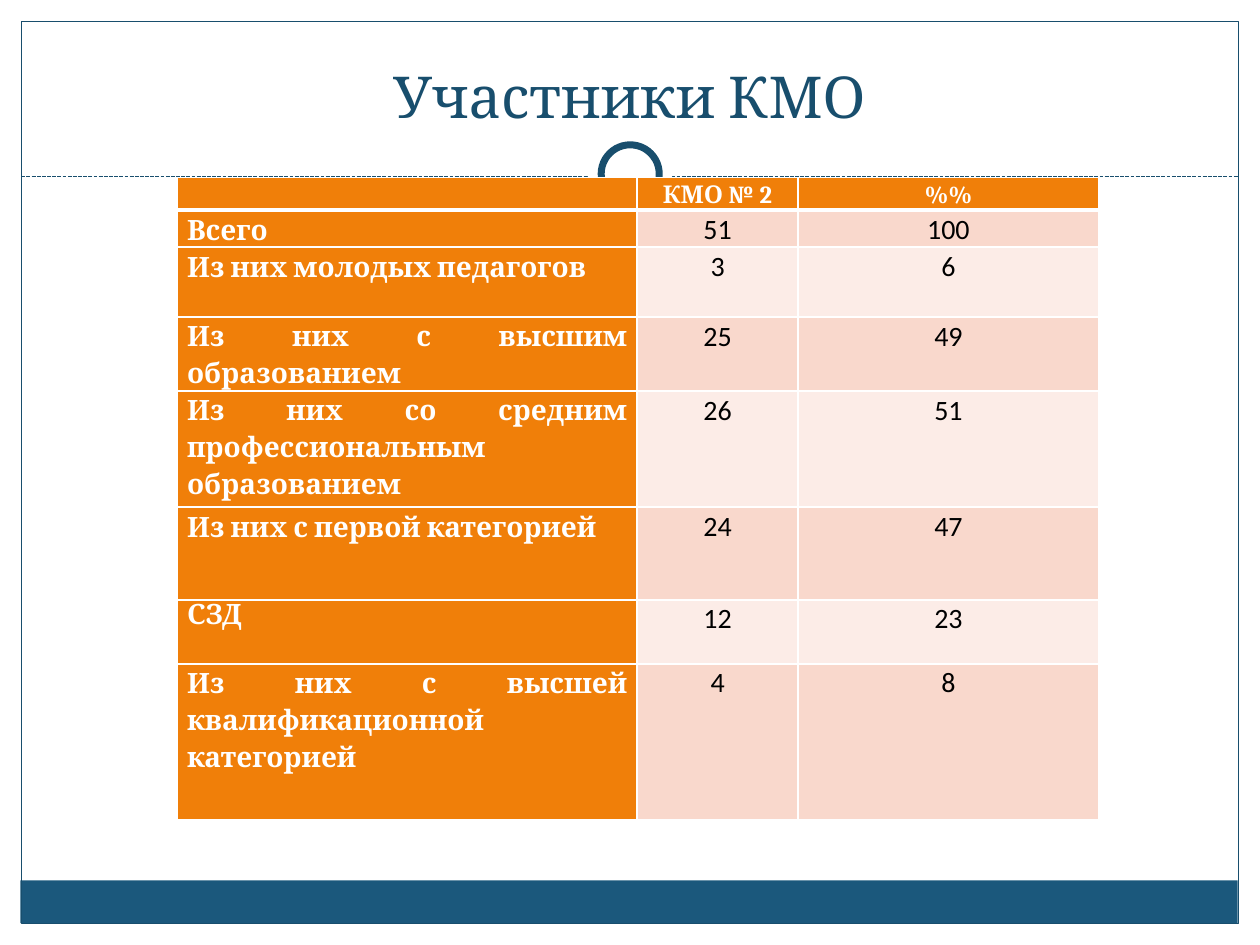
from lxml.etree import SubElement
from pptx import Presentation
from pptx.dml.color import RGBColor
from pptx.enum.dml import MSO_LINE
from pptx.enum.shapes import MSO_CONNECTOR, MSO_SHAPE
from pptx.enum.text import MSO_ANCHOR, PP_ALIGN
from pptx.oxml.ns import qn
from pptx.util import Cm, Pt

WHITE = RGBColor(0xFF, 0xFF, 0xFF)
BLACK = RGBColor(0, 0, 0)
NAVY = RGBColor(0x18, 0x4E, 0x6D)
BLUE = RGBColor(0x1B, 0x58, 0x7C)
ORANGE = RGBColor(0xF0, 0x7F, 0x09)
PINK = RGBColor(0xF9, 0xD8, 0xCC)
PALE = RGBColor(0xFC, 0xEC, 0xE7)

COLUMNS = [9.26, 3.25, 6.06]
HEIGHTS = [0.62, 0.74, 1.41, 1.49, 2.34, 1.87, 1.29, 3.15]
ROWS = [
    ("", "КМО № 2", "%%"),
    ("Всего", "51", "100"),
    ("Из них молодых педагогов", "3", "6"),
    ("Из них с высшим образованием", "25", "49"),
    ("Из них со средним профессиональным образованием", "26", "51"),
    ("Из них с первой категорией", "24", "47"),
    ("СЗД", "12", "23"),
    ("Из них с высшей квалификационной категорией", "4", "8"),
]


def write(tf, text, size=16, font="Cambria", color=WHITE, bold=False,
          align=PP_ALIGN.CENTER, spacing=None):
    p = tf.paragraphs[0]
    p.alignment = align
    p.line_spacing = spacing
    if not text:
        SubElement(p._p, qn("a:endParaRPr"), sz=str(size * 100))
        return
    r = p.add_run()
    r.text = text
    r.font.size, r.font.name, r.font.bold = Pt(size), font, bold
    r.font.color.rgb = color


class Deck:
    def __init__(self, prs):
        self.s = prs.slides.add_slide(prs.slide_layouts[5])

    def shape(self, kind, x, y, w, h, fill=None, line=None, width=0.75):
        sp = self.s.shapes.add_shape(kind, Cm(x), Cm(y), Cm(w), Cm(h))
        sp.shadow.inherit = False
        if fill is None:
            sp.fill.background()
        else:
            sp.fill.solid()
            sp.fill.fore_color.rgb = fill
        if line is None:
            sp.line.fill.background()
        else:
            sp.line.color.rgb = line
            sp.line.width = Pt(width)

    def dashed_line(self, x1, x2, y):
        cn = self.s.shapes.add_connector(
            MSO_CONNECTOR.STRAIGHT, Cm(x1), Cm(y), Cm(x2), Cm(y))
        cn.line.color.rgb = NAVY
        cn.line.width = Pt(0.75)
        cn.line.dash_style = MSO_LINE.SQUARE_DOT
        SubElement(cn._element.spPr, qn("a:effectLst"))

    def title(self, text, x, y, w, h):
        sp = self.s.shapes.title
        sp.left, sp.top, sp.width, sp.height = Cm(x), Cm(y), Cm(w), Cm(h)
        sp.text_frame.vertical_anchor = MSO_ANCHOR.BOTTOM
        write(sp.text_frame, text, size=33, color=NAVY)
        # Bring the title in front of the background
        self.s.shapes._spTree.append(sp._element)

    def borders(self, cell, **widths):
        tc_pr = cell._tc.get_or_add_tcPr()
        for side in "LRTB":
            ln = SubElement(tc_pr, qn(f"a:ln{side}"),
                            w=str(Pt(widths.get(side, 1))))
            fill = SubElement(ln, qn("a:solidFill"))
            SubElement(fill, qn("a:srgbClr"), val=str(WHITE))

    def table(self, rows, x, y, columns, heights):
        tbl = self.s.shapes.add_table(
            len(rows), len(columns), Cm(x), Cm(y),
            Cm(sum(columns)), Cm(sum(heights))).table
        for column, width in zip(tbl.columns, columns):
            column.width = Cm(width)
        for i, (row, height) in enumerate(zip(rows, heights)):
            tbl.rows[i].height = Cm(height)
            for j, text in enumerate(row):
                self.cell(tbl.cell(i, j), text, i, j)

    def cell(self, cell, text, i, j):
        cell.margin_left = cell.margin_right = Cm(0.19)
        cell.margin_top = cell.margin_bottom = 0
        # A thick rule separates the header from the body
        self.borders(cell, B=3 if i == 0 else 1, T=3 if i == 1 else 1)
        cell.fill.solid()
        if i == 0:
            cell.fill.fore_color.rgb = ORANGE
            write(cell.text_frame, text, size=14, bold=True, spacing=1.15)
        elif j == 0:
            cell.fill.fore_color.rgb = ORANGE
            short = text == "СЗД"
            write(cell.text_frame, text, bold=True,
                  align=PP_ALIGN.LEFT if short else PP_ALIGN.JUSTIFY,
                  spacing=None if short else 1.15)
        else:
            cell.fill.fore_color.rgb = PINK if i % 2 else PALE
            write(cell.text_frame, text, font="Calibri", color=BLACK,
                  spacing=1.07)


def main():
    prs = Presentation()
    prs.slide_width, prs.slide_height = Cm(25.4), Cm(19.05)
    deck = Deck(prs)

    # White margins, bottom band and frame
    deck.shape(MSO_SHAPE.RECTANGLE, 0, 0, 25.4, 3.86, fill=WHITE)
    for x in (0, 24.97):
        deck.shape(MSO_SHAPE.RECTANGLE, x, 0, 0.43, 19.05, fill=WHITE)
    deck.shape(MSO_SHAPE.RECTANGLE, 0.41, 17.75, 24.54, 0.86, fill=BLUE)
    deck.shape(MSO_SHAPE.RECTANGLE, 0.43, 0.43, 24.54, 18.19, line=NAVY)

    # Dashed divider with a ring
    deck.dashed_line(0.43, 24.97, 3.56)
    deck.shape(MSO_SHAPE.OVAL, 11.85, 2.67, 1.7, 1.7, fill=WHITE)
    deck.shape(MSO_SHAPE.OVAL, 12.12, 2.92, 1.17, 1.17,
               fill=WHITE, line=NAVY, width=4)

    # Title and table
    deck.title("Участники КМО", 0.84, 0.64, 23.7, 2.11)
    deck.table(ROWS, 3.58, 3.58, COLUMNS, HEIGHTS)
    prs.save("out.pptx")


if __name__ == "__main__":
    main()
